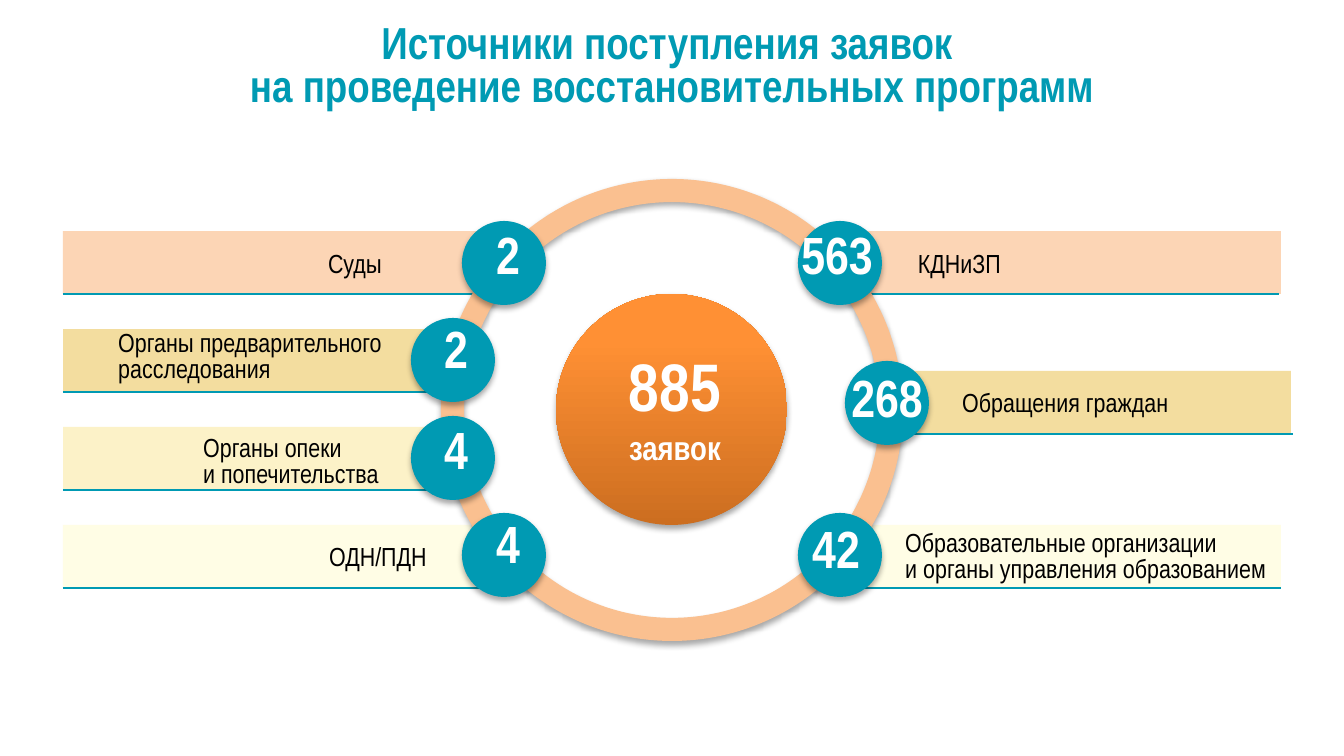
from dataclasses import dataclass

from lxml import etree
from pptx import Presentation
from pptx.dml.color import RGBColor
from pptx.enum.shapes import MSO_CONNECTOR, MSO_SHAPE
from pptx.enum.text import MSO_ANCHOR, MSO_AUTO_SIZE, PP_ALIGN
from pptx.oxml import parse_xml
from pptx.oxml.ns import nsdecls, qn
from pptx.util import Emu, Pt

RECTANGLE, OVAL, DONUT = MSO_SHAPE.RECTANGLE, MSO_SHAPE.OVAL, MSO_SHAPE.DONUT
STRAIGHT = MSO_CONNECTOR.STRAIGHT
MIDDLE = MSO_ANCHOR.MIDDLE
CENTER, JUSTIFY = PP_ALIGN.CENTER, PP_ALIGN.JUSTIFY
FIT_SHAPE, NO_FIT = MSO_AUTO_SIZE.SHAPE_TO_FIT_TEXT, MSO_AUTO_SIZE.NONE

SLIDE_WIDTH, SLIDE_HEIGHT = 1344, 756
EMU_PER_PX = 9144000 / SLIDE_WIDTH
BAR_HEIGHT = 63
BADGE_SIZE = 84


@dataclass(frozen=True)
class Theme:
    font: str = "Arial Narrow"
    accent: str = "009AB3"
    ring: str = "FAC090"
    peach: str = "FCD5B5"
    sand: str = "F3DD9F"
    cream: str = "FCF2C8"
    ivory: str = "FFFDE5"
    light: str = "FFFFFF"
    dark: str = "000000"
    total_stops: tuple = ((0, "CC6E20"), (80, "FF9034"), (100, "FF9136"))
    title_size: int = 24
    total_size: int = 36
    unit_size: int = 18
    count_size: int = 28
    label_size: int = 14


THEME = Theme()


@dataclass(frozen=True)
class Source:
    label: tuple
    label_box: tuple
    label_align: PP_ALIGN
    label_leading: int | None
    count: str
    count_center: tuple
    badge_center: tuple
    bar_left: int
    bar_top: int
    bar_width: int
    bar_color: str
    rule_ends: tuple


SOURCES = (
    Source(("Суды",), (314, 242, 82, 44), CENTER, 16, "2", (508, 270),
           (504, 263), 63, 231, 441, THEME.peach, (63, 473)),
    Source(("Органы предварительного ", "расследования"), (105, 325, 302, 66),
           JUSTIFY, 14, "2", (456, 364),
           (453, 360), 63, 329, 388, THEME.sand, (63, 473)),
    Source(("Органы опеки ", "и попечительства"), (190, 430, 207, 66),
           JUSTIFY, 14, "4", (456, 465),
           (453, 458), 63, 427, 388, THEME.cream, (63, 473)),
    Source(("ОДН/ПДН",), (314, 535, 128, 44), CENTER, 16, "4", (508, 559),
           (504, 555), 63, 525, 441, THEME.ivory, (63, 515)),
    Source(("КДНиЗП",), (903, 242, 113, 44), CENTER, 16, "563", (837, 270),
           (840, 263), 840, 231, 441, THEME.peach, (828, 1279)),
    Source(("Обращения граждан",), (949, 379, 235, 46), JUSTIFY, None,
           "268", (887, 413),
           (887, 403), 903, 371, 388, THEME.sand, (883, 1293)),
    Source(("Образовательные организации ", "и органы управления образованием"),
           (892, 525, 394, 66), JUSTIFY, 14, "42", (836, 564),
           (840, 555), 840, 525, 441, THEME.ivory, (829, 1281)),
)


def px(*lengths):
    return [Emu(round(length * EMU_PER_PX)) for length in lengths]


def centered(center, width, height):
    """Box of the given size around a center point."""
    return center[0] - width / 2, center[1] - height / 2, width, height


def style_font(paragraph, size, color, bold):
    font = paragraph.font
    font.name, font.size, font.bold = THEME.font, Pt(size), bold
    font.color.rgb = RGBColor.from_string(color)


def add_title(slide, text):
    title = slide.shapes.title
    title.left, title.top, title.width, title.height = px(0, 0, SLIDE_WIDTH, 137)
    frame = title.text_frame
    frame.text = text
    frame.auto_size, frame.vertical_anchor = NO_FIT, MIDDLE
    paragraph = frame.paragraphs[0]
    paragraph.alignment, paragraph.line_spacing = CENTER, 0.8
    style_font(paragraph, THEME.title_size, THEME.accent, True)


def add_text(slide, lines, box, size, color, bold=False, align=CENTER, leading=16):
    frame = slide.shapes.add_textbox(*px(*box)).text_frame
    frame.text = "\n".join(lines)
    frame.word_wrap, frame.auto_size = False, FIT_SHAPE
    frame.vertical_anchor = MIDDLE
    for paragraph in frame.paragraphs:
        paragraph.alignment = align
        if leading:
            paragraph.line_spacing = Pt(leading)
        style_font(paragraph, size, color, bold)


def add_shape(slide, kind, box, color):
    shape = slide.shapes.add_shape(kind, *px(*box))
    shape.fill.solid()
    shape.fill.fore_color.rgb = RGBColor.from_string(color)
    shape.line.fill.background()
    shape.shadow.inherit = False
    return shape


def add_raised_shape(slide, kind, box, color):
    """Shape with a soft shadow below it."""
    shape = add_shape(slide, kind, box, color)
    shape._element.spPr.find(qn("a:effectLst")).append(parse_xml(
        f'<a:outerShdw {nsdecls("a")} blurRad="40000" dist="23000" '
        'dir="5400000" rotWithShape="0"><a:srgbClr val="000000">'
        '<a:alpha val="35000"/></a:srgbClr></a:outerShdw>'))
    return shape


def apply_gradient(shape, stops):
    """Fill the shape from bottom to top with (percent, color) stops."""
    stop_list = "".join(
        f'<a:gs pos="{percent * 1000}"><a:srgbClr val="{color}"/></a:gs>'
        for percent, color in stops)
    properties = shape._element.spPr
    properties.replace(properties.find(qn("a:solidFill")), parse_xml(
        f'<a:gradFill {nsdecls("a")} rotWithShape="1"><a:gsLst>{stop_list}'
        '</a:gsLst><a:lin ang="16200000" scaled="0"/></a:gradFill>'))


def add_rule(slide, left, right, y):
    rule = slide.shapes.add_connector(STRAIGHT, *px(left, y, right, y))
    rule.line.color.rgb = RGBColor.from_string(THEME.accent)
    rule.line.width = Pt(0.75)
    etree.SubElement(rule._element.spPr, qn("a:effectLst"))


def add_bar(slide, source):
    box = source.bar_left, source.bar_top, source.bar_width, BAR_HEIGHT
    add_shape(slide, RECTANGLE, box, source.bar_color)
    add_rule(slide, *source.rule_ends, source.bar_top + BAR_HEIGHT)


def add_total(slide, total, unit):
    disc = add_raised_shape(slide, OVAL, (556, 294, 231, 231), THEME.ring)
    apply_gradient(disc, THEME.total_stops)
    add_text(slide, [total], centered((675, 410), 120, 51),
             THEME.total_size, THEME.light, bold=True)
    add_text(slide, [unit], centered((675, 452), 121, 44),
             THEME.unit_size, THEME.light, bold=True)


def add_badge(slide, source):
    add_raised_shape(slide, OVAL,
                     centered(source.badge_center, BADGE_SIZE, BADGE_SIZE),
                     THEME.accent)
    count_width = 27 + 24 * len(source.count)
    add_text(slide, [source.count], centered(source.count_center, count_width, 48),
             THEME.count_size, THEME.light, bold=True)


def main():
    deck = Presentation()
    deck.slide_width, deck.slide_height = px(SLIDE_WIDTH, SLIDE_HEIGHT)
    slide = deck.slides.add_slide(deck.slide_layouts[5])

    add_title(slide, "Источники поступления заявок \vна проведение восстановительных программ")
    for source in SOURCES:
        add_bar(slide, source)
    add_total(slide, "885", "заявок")
    ring = add_raised_shape(slide, DONUT, (441, 179, 462, 462), THEME.ring)
    ring.adjustments[0] = 0.05
    for source in SOURCES:
        add_badge(slide, source)
        add_text(slide, source.label, source.label_box, THEME.label_size,
                 THEME.dark, align=source.label_align, leading=source.label_leading)

    deck.save("out.pptx")


if __name__ == "__main__":
    main()
